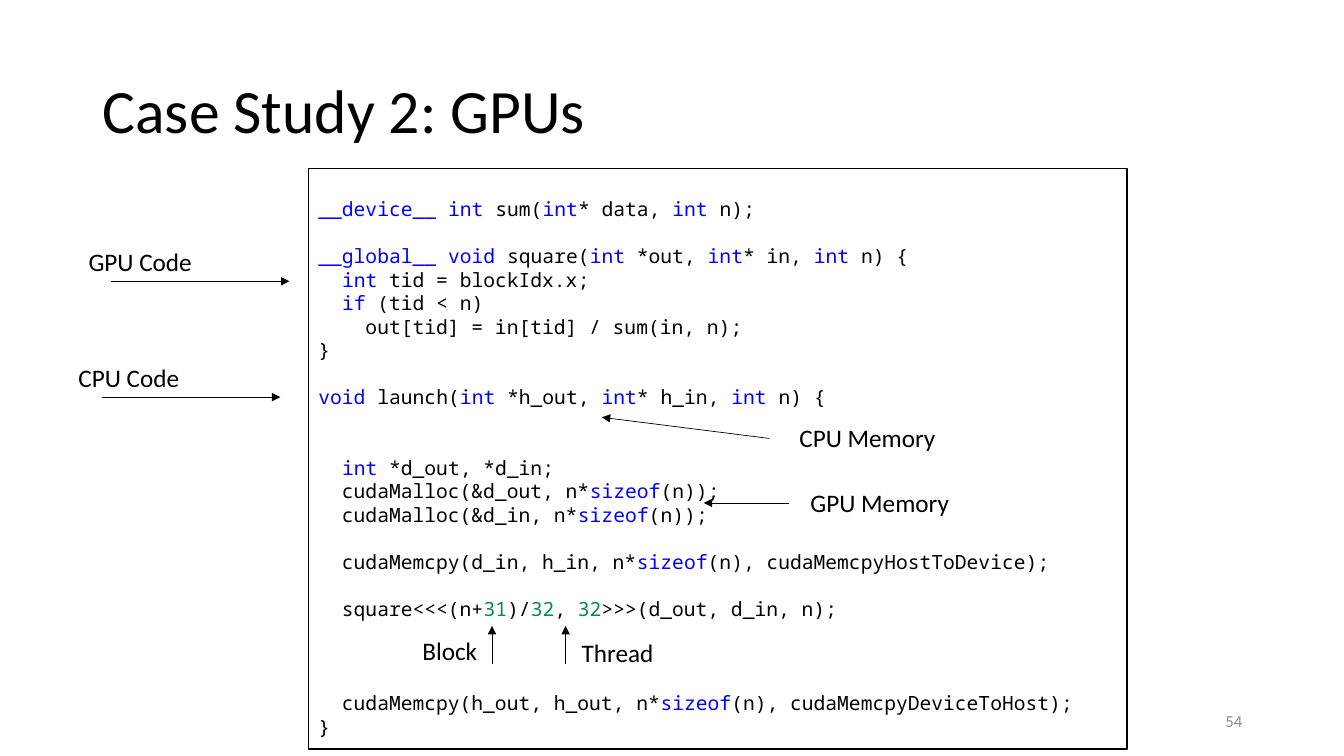
from itertools import groupby

from lxml import etree
from pptx import Presentation
from pptx.dml.color import RGBColor
from pptx.enum import shapes, text
from pptx.oxml import ns
from pptx.util import Inches, Pt

BLACK, WHITE, GREY, BLUE, GREEN = "000000", "FFFFFF", "8C8C8C", "0000FF", "098658"
KEYWORDS = {"__device__", "__global__", "int", "void", "if", "sizeof"}
CODE_LINE = 16.8  # height of one line of code, in points

CODE = """
__device__ int sum(int* data, int n);

__global__ void square(int *out, int* in, int n) {
  int tid = blockIdx.x;
  if (tid < n)
    out[tid] = in[tid] / sum(in, n);
}

void launch(int *h_out, int* h_in, int n) {


  int *d_out, *d_in;
  cudaMalloc(&d_out, n*sizeof(n));
  cudaMalloc(&d_in, n*sizeof(n));

  cudaMemcpy(d_in, h_in, n*sizeof(n), cudaMemcpyHostToDevice);

  square<<<(n+31)/32, 32>>>(d_out, d_in, n);



  cudaMemcpy(h_out, h_out, n*sizeof(n), cudaMemcpyDeviceToHost);
}"""

# text, left, top, width, height
LABELS = [
    ("GPU Code", 0.78, 2.39, 1.24, 0.4),
    ("CPU Code", 0.68, 3.55, 1.21, 0.4),
    ("CPU Memory", 7.83, 4.14, 1.57, 0.4),
    ("GPU Memory", 7.94, 4.79, 1.86, 0.4),
    ("Block", 4.09, 6.25, 0.75, 0.4),
    ("Thread", 5.67, 6.27, 0.92, 0.4),
]

# from x, from y, to x, to y
ARROWS = [
    (1.1, 2.79, 2.87, 2.79),
    (1.01, 3.94, 2.78, 3.94),
    (7.63, 4.35, 5.97, 4.14),
    (7.83, 4.99, 6.98, 4.99),
    (4.88, 6.59, 4.88, 6.21),
    (5.61, 6.59, 5.61, 6.21),
]


def rgb(color):
    return RGBColor.from_string(color)


def token_color(token):
    if token in KEYWORDS:
        return BLUE
    return GREEN if token.isdigit() else BLACK


class SlideBuilder:
    font = "Calibri"
    code_font = "Noto Sans Mono"

    def __init__(self, slide):
        self.shapes = slide.shapes

    def style(self, font, name, size, color):
        font.name, font.size = name, Pt(size)
        font.color.rgb = rgb(color)

    def label(self, words, *place, size=18, color=BLACK, wrap=False,
              anchor=text.MSO_ANCHOR.TOP, align=text.PP_ALIGN.LEFT, spacing=1.0):
        box = self.shapes.add_textbox(*map(Inches, place))
        frame = box.text_frame
        frame.text = words
        frame.word_wrap = wrap
        frame.vertical_anchor = anchor
        para = frame.paragraphs[0]
        para.alignment, para.line_spacing = align, spacing
        self.style(para.runs[0].font, self.font, size, color)

    def code(self, source, *place):
        """Draw a bordered listing; blank lines become space above the next line."""
        box = self.shapes.add_shape(shapes.MSO_SHAPE.RECTANGLE, *map(Inches, place))
        box.shadow.inherit = False
        box.fill.solid()
        box.fill.fore_color.rgb = rgb(WHITE)
        box.line.color.rgb = rgb(BLACK)
        box.line.width = Pt(1)
        frame = box.text_frame
        frame.word_wrap = True
        frame.vertical_anchor = text.MSO_ANCHOR.TOP
        frame.margin_top = Inches(0.05) + Pt(CODE_LINE)
        lines = source.strip("\n").split("\n")
        blanks = 0
        for number, line in enumerate(lines):
            if not line:
                blanks += 1
                continue
            para = frame.add_paragraph() if number else frame.paragraphs[0]
            para.alignment = text.PP_ALIGN.LEFT
            para.space_before = Pt(blanks * CODE_LINE)
            blanks = 0
            for _, letters in groupby(line, lambda c: c.isalnum() or c == "_"):
                span = para.add_run()
                span.text = "".join(letters)
                self.style(span.font, self.code_font, 14, token_color(span.text))

    def arrow(self, *ends):
        line = self.shapes.add_connector(shapes.MSO_CONNECTOR.STRAIGHT, *map(Inches, ends))
        line.line.color.rgb = rgb(BLACK)
        line.line.width = Pt(0.5)
        etree.SubElement(line.line._get_or_add_ln(), ns.qn("a:tailEnd"), type="triangle")
        etree.SubElement(line._element.spPr, ns.qn("a:effectLst"))


def main():
    deck = Presentation()
    deck.slide_width, deck.slide_height = Inches(13.33), Inches(7.5)
    page = SlideBuilder(deck.slides.add_slide(deck.slide_layouts[6]))
    middle = text.MSO_ANCHOR.MIDDLE
    page.label("Case Study 2: GPUs", 0.92, 0.4, 11.5, 1.45, size=44, wrap=True,
               anchor=middle, spacing=0.9)
    page.label("54", 9.42, 6.95, 3, 0.4, size=12, color=GREY, wrap=True,
               anchor=middle, align=text.PP_ALIGN.RIGHT)
    page.code(CODE, 3.06, 1.67, 8.12, 5.76)
    for label in LABELS:
        page.label(*label)
    for ends in ARROWS:
        page.arrow(*ends)
    deck.save("out.pptx")


if __name__ == "__main__":
    main()
